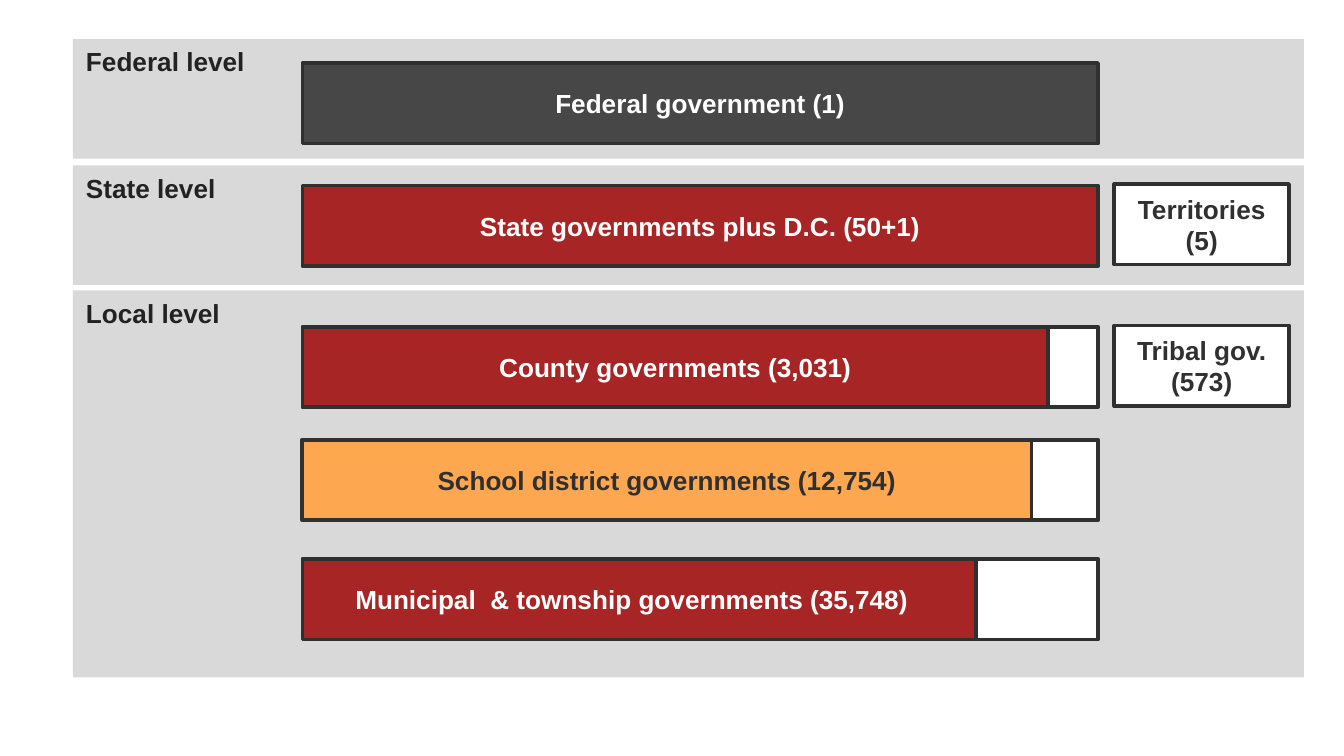
from dataclasses import dataclass

from pptx import Presentation
from pptx.dml.color import RGBColor as RGB
from pptx.enum.shapes import MSO_SHAPE as Shape
from pptx.enum.text import MSO_ANCHOR as Anchor, PP_ALIGN as Align
from pptx.util import Pt


@dataclass(frozen=True)
class Theme:
    """Colours, type and line sizes of the slide."""
    band: RGB = RGB(0xD9, 0xD9, 0xD9)
    label: RGB = RGB(0x22, 0x22, 0x22)
    dark: RGB = RGB(0x30, 0x30, 0x30)
    grey: RGB = RGB(0x47, 0x47, 0x47)
    red: RGB = RGB(0xA7, 0x25, 0x25)
    orange: RGB = RGB(0xFD, 0xA7, 0x51)
    white: RGB = RGB(0xFF, 0xFF, 0xFF)
    font: str = "Arial"
    size: int = 14
    line: int = 2


T = Theme()
BAND_X, BAND_W = 39, 659.5
BAR_X, BAR_W, BAR_H = 162, 426.2, 43.2
SIDE_X, SIDE_W = 597, 93.6

BANDS = [
    ("Federal level", 21, 64),
    ("State level", 88.6, 64),
    ("Local level", 155.5, 207.4),
]
BARS = [
    ("Federal government (1)", 33.8, BAR_W, T.grey, T.white),
    ("State governments plus D.C. (50+1)", 99.4, BAR_W, T.red, T.white),
    ("County governments (3,031)", 175, 399.6, T.red, T.white),
    ("School district governments (12,754)", 235.6, 390.6, T.orange, T.dark),
    ("Municipal  & township governments (35,748)", 299.4, 361, T.red, T.white),
]
SIDES = [(("Territories", "(5)"), 98.6), (("Tribal gov. (573)",), 174.4)]


def add_rect(s, x, y, w, h, fill):
    """Add a plain filled rectangle without outline or shadow."""
    sp = s.shapes.add_shape(Shape.RECTANGLE, Pt(x), Pt(y), Pt(w), Pt(h))
    sp.shadow.inherit = False
    sp.fill.solid()
    sp.fill.fore_color.rgb = fill
    sp.line.fill.background()
    return sp


def add_text(sp, lines, color, align, anchor):
    """Write bold lines into a shape, one paragraph each."""
    tf = sp.text_frame
    tf.word_wrap = True
    tf.vertical_anchor = anchor
    for i, line in enumerate(lines):
        p = tf.add_paragraph() if i else tf.paragraphs[0]
        p.alignment = align
        r = p.add_run()
        r.text = line
        r.font.name = T.font
        r.font.size = Pt(T.size)
        r.font.bold = True
        r.font.color.rgb = color


def add_band(s, label, y, h):
    """Add a level band with its label at the top left."""
    sp = add_rect(s, BAND_X, y, BAND_W, h, T.band)
    add_text(sp, [label], T.label, Align.LEFT, Anchor.TOP)


def add_box(s, x, y, w, fill, lines=(), color=T.dark):
    """Add an outlined box with centred text."""
    sp = add_rect(s, x, y, w, BAR_H, fill)
    sp.line.color.rgb = T.dark
    sp.line.width = Pt(T.line)
    add_text(sp, lines, color, Align.CENTER, Anchor.MIDDLE)
    return sp


def add_bar(s, label, y, w, fill, color):
    """Add a government bar and the white remainder up to full width."""
    sp = add_box(s, BAR_X, y, w, fill, [label], color)
    if w < BAR_W:
        add_box(s, BAR_X + w, y, BAR_W - w, T.white)
    return sp


def main():
    """Build the slide and save it."""
    prs = Presentation()
    prs.slide_width, prs.slide_height = Pt(720), Pt(405)
    s = prs.slides.add_slide(prs.slide_layouts[6])
    for band in BANDS:
        add_band(s, *band)
    bars = [add_bar(s, *bar) for bar in BARS]
    bars[-1].text_frame.margin_right = Pt(15)
    for lines, y in SIDES:
        add_box(s, SIDE_X, y, SIDE_W, T.white, lines)
    prs.save("out.pptx")


if __name__ == "__main__":
    main()
